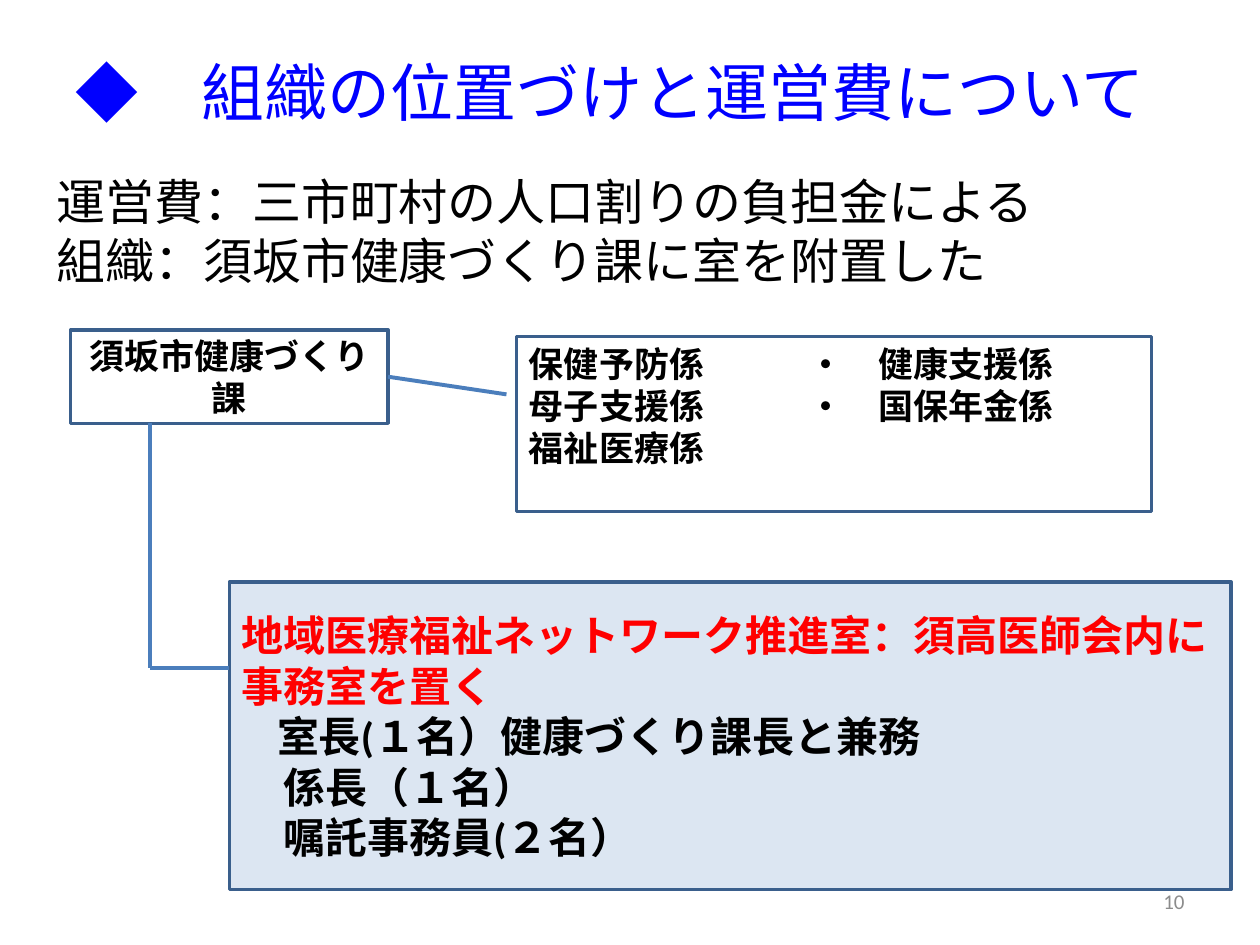
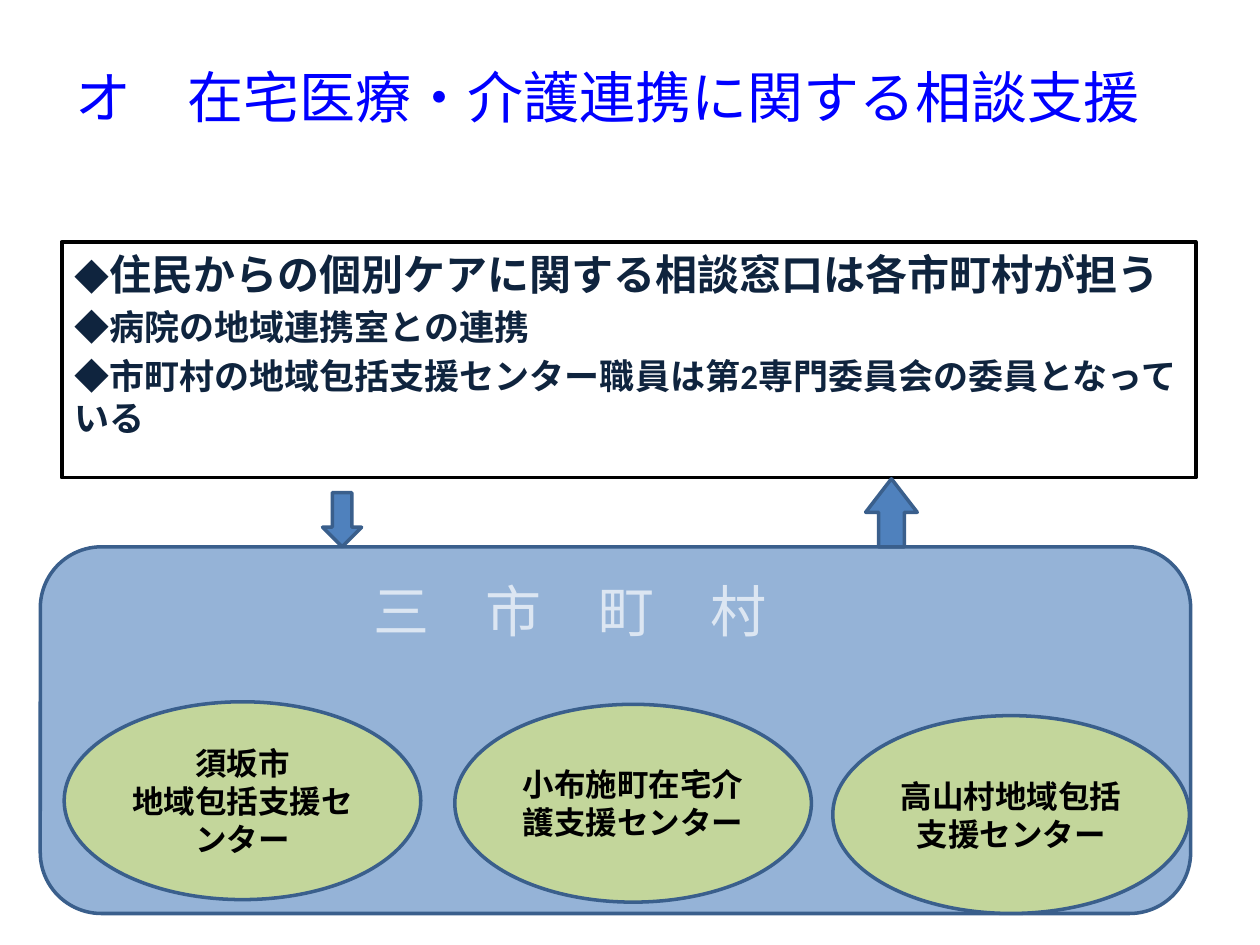
import dataclasses
import pptx
import pptx.util
import pptx.dml.color
import pptx.enum.shapes
import pptx.enum.text
import pptx.oxml.ns
import lxml.etree

Inches = pptx.util.Inches
Shape = pptx.enum.shapes.MSO_SHAPE
Align = pptx.enum.text.PP_ALIGN
Anchor = pptx.enum.text.MSO_ANCHOR
qn = pptx.oxml.ns.qn


@dataclasses.dataclass(frozen=True)
class Theme:
    font: str = "Calibri"
    wide: str = "Noto Sans CJK JP"
    black: str = "000000"
    blue: str = "0000FF"
    red: str = "FF0000"
    navy: str = "0F243E"
    gray: str = "8C8C8C"
    pale: str = "DCE6F2"
    sky: str = "95B3D7"
    green: str = "C3D69B"
    steel: str = "4F81BD"
    edge: str = "3A5F8C"
    link: str = "4B7EBC"
    tiny: int = 12
    small: int = 18
    body: int = 20
    large: int = 24
    lead: int = 28
    head: int = 32
    title: int = 36


T = Theme()


def rgb(code):
    return pptx.dml.color.RGBColor.from_string(code)


def write(shape, lines, size=T.body, color=T.black, font=T.font, bold=False,
          align=Align.LEFT, anchor=Anchor.MIDDLE, before=0, tab=None):
    """Each line is a text, or a dict with runs [(text, size)], color and indent."""
    frame = shape.text_frame
    frame.word_wrap = True
    frame.vertical_anchor = anchor
    for i, line in enumerate(lines):
        if isinstance(line, str):
            line = {"runs": [(line, size)]}
        para = frame.paragraphs[0] if i == 0 else frame.add_paragraph()
        para.alignment = align
        if i and before:
            para.space_before = pptx.util.Pt(before)
        props = para._p.get_or_add_pPr()
        if "indent" in line:
            props.set("marL", str(Inches(line["indent"])))
        if tab:
            stops = lxml.etree.SubElement(props, qn("a:tabLst"))
            lxml.etree.SubElement(stops, qn("a:tab"), pos=str(Inches(tab)), algn="l")
        for text, points in line["runs"]:
            run = para.add_run()
            run.text = text
            run.font.name = font
            run.font.size = pptx.util.Pt(points)
            run.font.bold = bold
            run.font.color.rgb = rgb(line.get("color", color))


def label(slide, box, lines, **style):
    shape = slide.shapes.add_textbox(*map(Inches, box))
    write(shape, lines, **style)


def panel(slide, box, kind=Shape.RECTANGLE, fill=None, edge=T.edge, width=2):
    shape = slide.shapes.add_shape(kind, *map(Inches, box))
    shape.shadow.inherit = False
    if fill:
        shape.fill.solid()
        shape.fill.fore_color.rgb = rgb(fill)
    else:
        shape.fill.background()
    shape.line.color.rgb = rgb(edge)
    shape.line.width = pptx.util.Pt(width)
    return shape


def link(slide, start, end):
    line = slide.shapes.add_connector(
        pptx.enum.shapes.MSO_CONNECTOR.STRAIGHT, *map(Inches, start + end))
    line.line.color.rgb = rgb(T.link)
    line.line.width = pptx.util.Pt(2.25)
    lxml.etree.SubElement(line._element.spPr, qn("a:effectLst"))
    return line


def title(slide, text, high, **style):
    label(slide, (0.5, 0.3, 9, high), [text], color=T.blue, **style)


def chart(slide, box):
    """Organisation chart: the section, its units and the new office."""
    x, y, w, h = box
    # Section and office
    sect = panel(slide, (x, y, 2.52, 0.74))
    write(sect, ["須坂市健康づくり課"], bold=True, align=Align.CENTER)
    left, top = x + 1.26, y + 2
    room = panel(slide, (left, top, w - 1.26, h - 2), fill=T.pale)
    write(room, [
        {"runs": [("地域医療福祉ネットワーク推進室：須高医師会内に", T.large)], "color": T.red},
        {"runs": [("事務室を置く", T.large)], "color": T.red},
        {"runs": [("室長(１名）健康づくり課長と兼務", T.large)], "indent": 0.28},
        {"runs": [("係長（１名）", T.large)], "indent": 0.33},
        {"runs": [("嘱託事務員(２名）", T.large)], "indent": 0.33},
    ], bold=True)
    # Units in two columns
    units = panel(slide, (x + 3.54, y + 0.05, 5.04, 1.39))
    write(units, ["保健予防係\t・　健康支援係", "母子支援係\t・　国保年金係", "福祉医療係"],
          bold=True, anchor=Anchor.TOP, tab=2.22)
    # Links
    link(slide, (x + 2.52, y + 0.37), (x + 3.46, y + 0.51)).begin_connect(sect, 3)
    stem, turn = x + 0.63, top + 0.68
    link(slide, (stem, y + 0.74), (stem, turn))
    link(slide, (stem, turn), (left, turn))


def towns(slide, box):
    """The three municipalities and their support centres."""
    x, y, w, h = box
    panel(slide, box, Shape.ROUNDED_RECTANGLE, T.sky)
    centers = [
        (0.19, 1.23, ["須坂市", "地域包括支援センター"]),
        (3.29, 1.25, ["小布施町在宅介護支援センター"]),
        (6.29, 1.34, ["高山村地域包括支援センター"]),
    ]
    for dx, dy, lines in centers:
        oval = panel(slide, (x + dx, y + dy, 2.83, 1.57), Shape.OVAL, T.green)
        write(oval, lines, size=T.small, bold=True, align=Align.CENTER)
    label(slide, (x + 2.55, y + 0.19, 3.54, 0.64), ["三　市　町　村"],
          size=T.head, color=T.pale, font=T.wide, anchor=Anchor.TOP)
    # Arrows to and from the box above
    panel(slide, (x + 2.24, y - 0.43, 0.31, 0.43), Shape.DOWN_ARROW, T.steel)
    rise = panel(slide, (x + 6.55, y - 0.54, 0.41, 0.54), Shape.UP_ARROW, T.steel)
    rise.adjustments[1] = 0.65


def points(slide, box):
    """Framed list of the main points."""
    frame = panel(slide, box, edge=T.black, width=2.25)
    write(frame, [
        {"runs": [("◆", T.body), ("住民からの個別ケアに関する相談窓口は各市町村が担う", T.large)]},
        "◆病院の地域連携室との連携",
        "◆市町村の地域包括支援センター職員は第2専門委員会の委員となっている",
    ], color=T.navy, bold=True, anchor=Anchor.TOP, before=4)


def place(slide):
    """Slide on the office and its running costs."""
    chart(slide, (0.56, 2.62, 9.21, 4.44))
    label(slide, (7.17, 6.95, 2.33, 0.4), ["10"],
          size=T.tiny, color=T.gray, align=Align.RIGHT)
    title(slide, "◆　組織の位置づけと運営費について", 0.85, size=T.title, font=T.wide)
    label(slide, (0.35, 1.31, 9.42, 1.04),
          ["運営費：三市町村の人口割りの負担金による", "組織：須坂市健康づくり課に室を附置した"],
          size=T.lead, anchor=Anchor.TOP)


def advice(slide):
    """Slide on consultation support."""
    points(slide, (0.49, 1.92, 9, 1.87))
    towns(slide, (0.32, 4.34, 9.13, 2.91))
    title(slide, "オ　在宅医療・介護連携に関する相談支援", 0.93, size=T.head)


def main():
    deck = pptx.Presentation()
    deck.slide_width, deck.slide_height = Inches(10), Inches(7.5)
    for build in (place, advice):
        build(deck.slides.add_slide(deck.slide_layouts[6]))
    deck.save("out.pptx")


if __name__ == "__main__":
    main()
